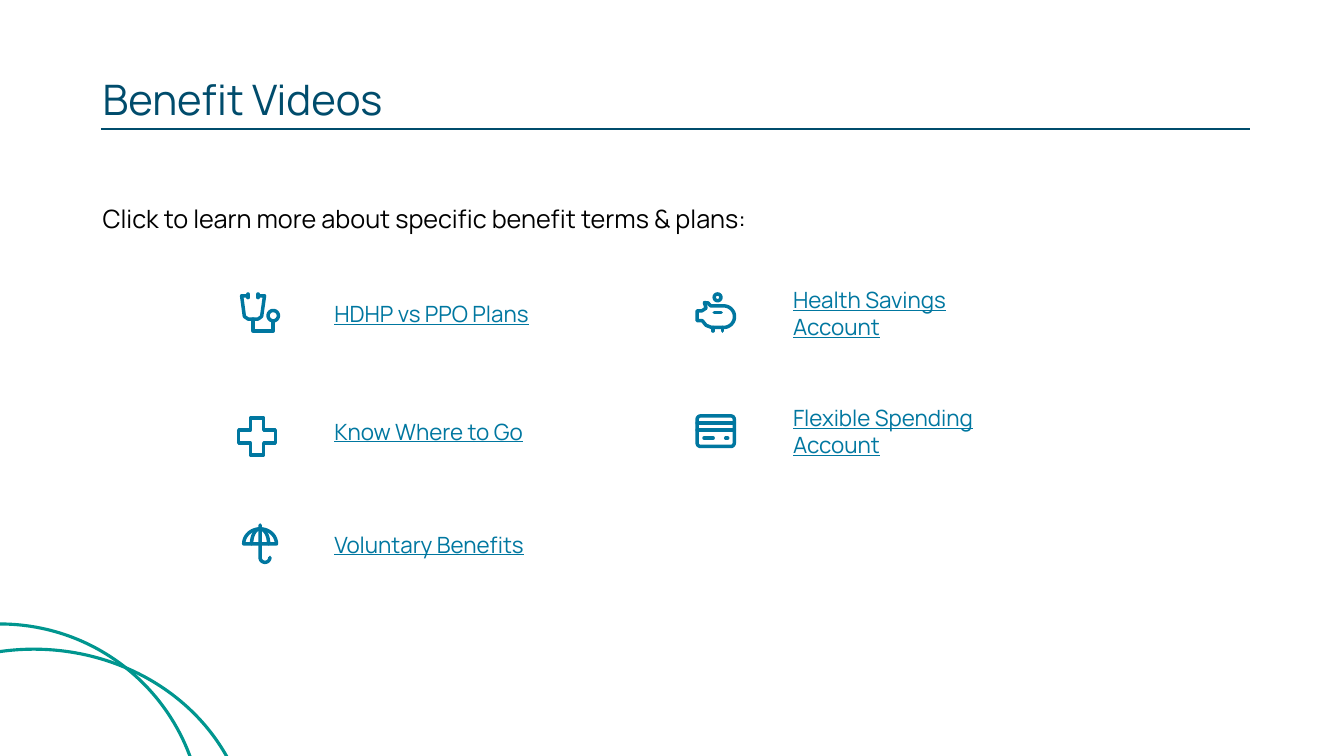
import math
from dataclasses import dataclass

import pptx
import pptx.enum.shapes
import pptx.enum.text
import pptx.oxml.ns
import pptx.util
from lxml import etree
from pptx.dml.color import RGBColor

Pt = pptx.util.Pt
SHAPES = pptx.enum.shapes.MSO_SHAPE
ANCHORS = pptx.enum.text.MSO_ANCHOR
LEFT = pptx.enum.text.PP_ALIGN.LEFT


@dataclass(frozen=True)
class Theme:
    font: str = "Manrope"
    navy: str = "004C6C"
    blue: str = "0077A0"
    teal: str = "00968F"
    black: str = "000000"
    white: str = "FFFFFF"
    title_size: float = 30
    intro_size: float = 18
    label_size: float = 16
    rule_width: float = 1.5
    ring_width: float = 2.25
    icon_width: float = 2.5


def arc(x, y, radius_x, radius_y, start, end, steps=24):
    """Points along an ellipse, in degrees clockwise from the right."""
    angles = [math.radians(start + (end - start) * i / steps) for i in range(steps + 1)]
    return [(x + radius_x * math.cos(a), y + radius_y * math.sin(a)) for a in angles]


def circle(x, y, radius):
    return arc(x, y, radius, radius, 0, 360)


def stethoscope():
    ticks = [[(x, 1.2), (x, 3.8)] for x in (5.8, 13)]
    tube = [(5.8, 2.5), (1.2, 2.5), (3.2, 17.3), (5.8, 19.1),
            (13, 19.1), (15.5, 17.3), (17.6, 2.5), (13, 2.5)]
    hose = [(9.4, 19.1), (9.4, 27.6), (23.8, 27.6), (23.8, 20.4)]
    return [tube, hose, circle(23.8, 16.7, 3.7), *ticks]


def cross():
    a, b, c, d = 1.3, 9.7, 19.2, 27.5
    return [[(b, a), (c, a), (c, b), (d, b), (d, c), (c, c), (c, d),
             (b, d), (b, c), (a, c), (a, b), (b, b), (b, a)]]


def umbrella():
    middle, hem = 13, 14.8
    canopy = arc(middle, hem, 11.7, 10.7, 180, 360)
    ribs = arc(middle, hem, 6.1, 10.7, 180, 360)
    handle = [(middle, 1.3), *arc(16.5, 24.5, 3.5, 3.5, 180, 0)]
    return [canopy + canopy[:1], ribs, handle]


def piggy_bank():
    back = arc(20.2, 17.4, 7.7, 7.7, -90, 90)
    front = [(11.5, 25.1), (7.6, 23.6), (4.9, 20.3), (1.2, 20.3), (1.2, 13.2), (4.7, 13.2),
             (7.6, 11.3), (6.4, 7.4), (9, 7.6), (10.8, 9.7)]
    feet = [[(x, 25.1), (x, 27.7)] for x in (12.4, 19.5)]
    return [back + front + back[:1], circle(15.8, 3.6, 2.4), [(13.4, 14.4), (18.4, 14.4)], *feet]


def bank_card():
    left, top, right, bottom, radius = 1.2, 1.2, 27.7, 23, 2.4
    corners = [(right - radius, bottom - radius, 0), (left + radius, bottom - radius, 90),
               (left + radius, top + radius, 180), (right - radius, top + radius, 270)]
    border = [point for x, y, turn in corners
              for point in arc(x, y, radius, radius, turn, turn + 90, 6)]
    bands = [[(left, y), (right, y)] for y in (6.1, 11.2)]
    dashes = [[(6.1, 17), (12.6, 17)], [(21.6, 17), (23, 17)]]
    return [border + border[:1], *bands, *dashes]


class SlideBuilder:
    def __init__(self, page, theme):
        self.page, self.theme = page, theme

    def set_text(self, frame, text, size, color, anchor, spacing=None, underline=None):
        frame.word_wrap = True
        frame.auto_size = pptx.enum.text.MSO_AUTO_SIZE.NONE
        frame.vertical_anchor = anchor
        para = frame.paragraphs[0]
        for name, value in {"alignment": LEFT, **(spacing or {})}.items():
            setattr(para, name, value)
        span = para.add_run()
        span.text = text
        look = {"name": self.theme.font, "size": Pt(size), "underline": underline, "bold": False}
        for name, value in look.items():
            setattr(span.font, name, value)
        span.font.color.rgb = RGBColor.from_string(color)

    def stroke(self, shape, color, width):
        shape.line.color.rgb = RGBColor.from_string(color)
        shape.line.width = Pt(width)

    def title(self, text, *place):
        box = self.page.shapes.title
        for name, value in zip(("left", "top", "width", "height"), place):
            setattr(box, name, Pt(value))
        self.set_text(box.text_frame, text, self.theme.title_size, self.theme.navy,
                      ANCHORS.MIDDLE, {"line_spacing": 0.9, "space_after": Pt(6)})

    def intro(self, text, *place):
        box = self.page.shapes.add_textbox(*map(Pt, place))
        self.set_text(box.text_frame, text, self.theme.intro_size, self.theme.black,
                      ANCHORS.TOP, {"line_spacing": 0.9})

    def label(self, text, *place):
        box = self.page.shapes.add_shape(SHAPES.RECTANGLE, *map(Pt, place))
        box.shadow.inherit = False
        box.fill.solid()
        box.fill.fore_color.rgb = RGBColor.from_string(self.theme.white)
        box.line.fill.background()
        self.set_text(box.text_frame, text, self.theme.label_size, self.theme.blue,
                      ANCHORS.MIDDLE, underline=True)

    def ring(self, *place):
        ring = self.page.shapes.add_shape(SHAPES.OVAL, *map(Pt, place))
        ring.shadow.inherit = False
        ring.fill.background()
        self.stroke(ring, self.theme.teal, self.theme.ring_width)

    def rule(self, *ends):
        line = self.page.shapes.add_connector(
            pptx.enum.shapes.MSO_CONNECTOR.STRAIGHT, *map(Pt, ends))
        self.stroke(line, self.theme.navy, self.theme.rule_width)
        etree.SubElement(line._element.spPr, pptx.oxml.ns.qn("a:effectLst"))

    def icon(self, outlines, left, top):
        """Draw all outlines, given from the icon's corner, as one stroked shape."""
        placed = [[(Pt(left + x), Pt(top + y)) for x, y in outline] for outline in outlines]
        pen = self.page.shapes.build_freeform(*placed[0][0])
        for outline in placed:
            pen.move_to(*outline[0])
            pen.add_line_segments(outline[1:], close=False)
        shape = pen.convert_to_shape()
        shape.shadow.inherit = False
        shape.fill.background()
        self.stroke(shape, self.theme.blue, self.theme.icon_width)
        line = shape._element.spPr.find(pptx.oxml.ns.qn("a:ln"))
        line.set("cap", "rnd")
        etree.SubElement(line, pptx.oxml.ns.qn("a:round"))


def main():
    deck = pptx.Presentation()
    deck.slide_width, deck.slide_height = Pt(960), Pt(540)
    builder = SlideBuilder(deck.slides.add_slide(deck.slide_layouts[5]), Theme())

    builder.ring(-144.7, 445.7, 289.4, 289.4)
    builder.ring(-130.3, 463.7, 308.9, 279.4)
    builder.rule(72, 92.2, 892.8, 92.2)
    builder.title("Benefit Videos", 66.2, 53.3, 828, 38.9)
    builder.intro("Click to learn more about specific benefit terms & plans:", 66.2, 144, 828, 40)

    columns, rows = (231.8, 559.4), (200.9, 285.1, 365.8)
    videos = [
        ("HDHP vs PPO Plans", 0, 0, stethoscope(), 171.4, 208.8),
        ("Know Where to Go", 0, 1, cross(), 169.2, 297.4),
        ("Voluntary Benefits", 0, 2, umbrella(), 172.8, 373.7),
        ("Health Savings Account", 1, 0, piggy_bank(), 496.8, 208.8),
        ("Flexible Spending Account", 1, 1, bank_card(), 496.8, 295.9),
    ]
    for text, column, row, outlines, left, top in videos:
        builder.label(text, columns[column], rows[row], 172.8, 46.1)
        builder.icon(outlines, left, top)

    deck.save("out.pptx")


if __name__ == "__main__":
    main()
